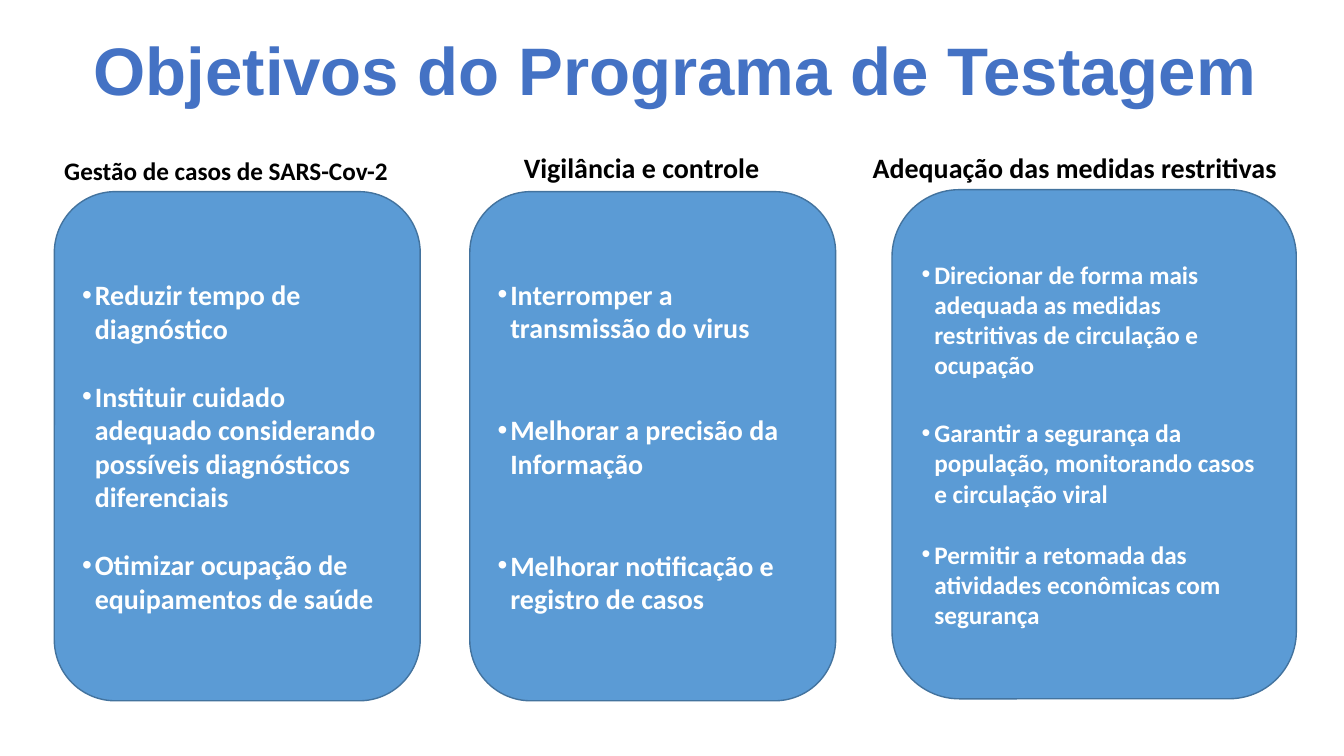
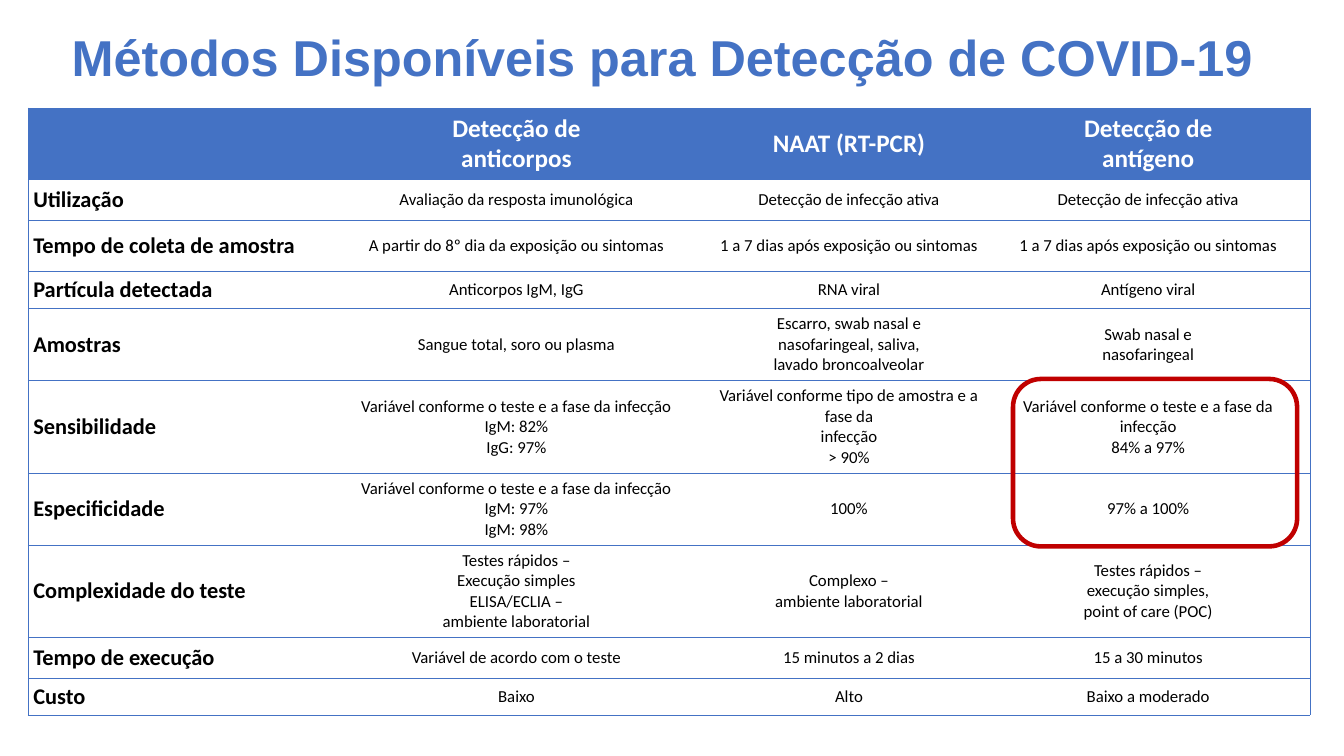
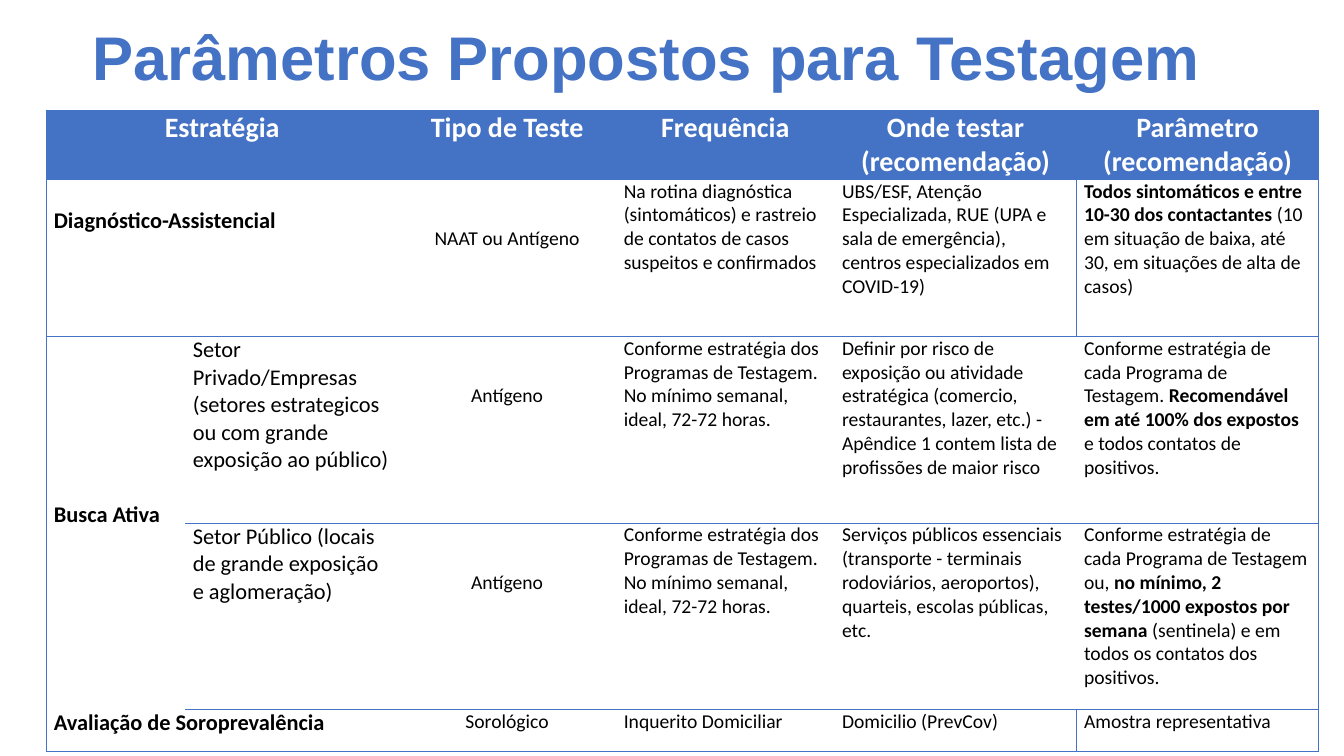
from lxml import etree
from pptx import Presentation
from pptx import util as u
from pptx.dml.color import RGBColor
from pptx.enum import shapes, text
from pptx.oxml.ns import qn

Cm, Pt = u.Cm, u.Pt
HUE = {"blue": "4472C4", "card": "5B9BD5", "edge": "43739E",
       "red": "C00000", "black": "000000", "white": "FFFFFF"}
LEFT, MID = text.PP_ALIGN.LEFT, text.PP_ALIGN.CENTER
TOP, HALF = text.MSO_ANCHOR.TOP, text.MSO_ANCHOR.MIDDLE
PLAIN = "{2D5ABB26-0587-4C30-8999-92F81FD0307C}"


def write(frame, words, size=18, hue="black", bold=False, face="Calibri",
          align=LEFT, anchor=TOP, lead=None, gaps=(), dots=False):
    """Fill a frame: a new line starts a paragraph, *stars* switch to bold."""
    frame.word_wrap = True
    frame.vertical_anchor = anchor
    for i, line in enumerate(words.split("\n")):
        para = frame.add_paragraph() if i else frame.paragraphs[0]
        para.alignment = align
        para.line_spacing = lead
        if i and gaps:
            para.space_before = Pt(gaps[i - 1])
        if dots:
            prop = para._p.get_or_add_pPr()
            prop.set("marL", str(Cm(0.32)))
            prop.set("indent", str(-Cm(0.32)))
            etree.SubElement(prop, qn("a:buFont"), typeface="Arial")
            etree.SubElement(prop, qn("a:buChar"), char="•")
        for j, part in enumerate(line.split("*")):
            if part:
                run = para.add_run()
                run.text = part
                font = run.font
                font.name, font.size = face, Pt(size)
                font.bold = bold or j % 2 == 1
                font.color.rgb = RGBColor.from_string(HUE[hue])


def grid(slide, left, top, cols, rows, cells, sizes, mids, head, pad,
         anchor=TOP, spans=(), bare=(), ruled=()):
    """Add a ruled table; bare cells lack a bottom line, ruled ones gain a left line."""
    table = slide.shapes.add_table(len(rows), len(cols), Cm(left), Cm(top),
                                   Cm(sum(cols)), Cm(sum(rows))).table
    table._tbl.tblPr.find(qn("a:tableStyleId")).text = PLAIN
    table.first_row = table.horz_banding = False
    for col, wide in zip(table.columns, cols):
        col.width = Cm(wide)
    for row, high in zip(table.rows, rows):
        row.height = Cm(high)
    for start, end in spans:
        table.cell(*start).merge(table.cell(*end))
    for r, line in enumerate(cells):
        for c, words in enumerate(line):
            cell = table.cell(r, c)
            cell.margin_left = cell.margin_right = Cm(pad[0])
            cell.margin_top = cell.margin_bottom = Cm(pad[1])
            cell.vertical_anchor = anchor
            cell.fill.solid()
            cell.fill.fore_color.rgb = RGBColor.from_string(HUE["white" if r else "blue"])
            if words:
                write(cell.text_frame, words, anchor=anchor,
                      size=sizes[c] if r else head,
                      hue="black" if r else "white", bold=not r or c == 0,
                      align=MID if not r or c in mids else LEFT)
            sides = {"lnL": c == 0 or (r, c) in ruled, "lnR": c == len(cols) - 1,
                     "lnT": r == 0, "lnB": (r, c) not in bare}
            prop = cell._tc.get_or_add_tcPr()
            for spot, side in enumerate(s for s in sides if sides[s]):
                rule = etree.Element(qn("a:" + side), w=str(Pt(0.5)))
                fill = etree.SubElement(rule, qn("a:solidFill"))
                etree.SubElement(fill, qn("a:srgbClr"), val=HUE["blue"])
                prop.insert(spot, rule)
    return table


deck = Presentation()
deck.slide_width, deck.slide_height = Cm(33.87), Cm(19.05)

# Slides and titles: text, size, left, top, width, height
titles = [
    ("Objetivos do Programa de Testagem", 48, 0.97, 0.66, 32.1, 2.41),
    ("Métodos Disponíveis para Detecção de COVID-19", 36, 0.71, 0.74, 31.98, 1.55),
    ("Parâmetros Propostos para Testagem", 44, 0.46, 0.43, 31.67, 2.21),
]
pages = []
for words, size, *box in titles:
    page = deck.slides.add_slide(deck.slide_layouts[6])
    frame = page.shapes.add_textbox(*map(Cm, box)).text_frame
    write(frame, words, size=size, hue="blue", bold=True, face="Arial",
          align=MID, anchor=HALF, lead=0.9)
    pages.append(page)
goals, tests, plan = pages

# Goals: heading, its size and box, then card box, text size, gaps and points
cards = [
    ("Gestão de casos de SARS-Cov-2", 18, (1.37, 3.78, 8.74, 1.02),
     (1.37, 4.83, 9.22, 12.83), 20, (24.4, 24.4),
     "Reduzir tempo de diagnóstico\n"
     "Instituir cuidado adequado considerando possíveis diagnósticos diferenciais\n"
     "Otimizar ocupação de equipamentos de saúde"),
    ("Vigilância e controle", 20, (12.95, 3.66, 6.5, 1.12),
     (11.84, 4.83, 9.22, 12.83), 20, (48.8, 48.8),
     "Interromper a transmissão do virus\n"
     "Melhorar a precisão da Informação\n"
     "Melhorar notificação e registro de casos"),
    ("Adequação das medidas restritivas", 20, (21.74, 3.66, 11.15, 1.12),
     (22.48, 4.78, 10.19, 12.83), 18, (26.8, 22),
     "Direcionar de forma mais adequada as medidas restritivas de circulação e ocupação\n"
     "Garantir a segurança da população, monitorando casos e circulação viral\n"
     "Permitir a retomada das atividades econômicas com segurança"),
]
for name, big, spot, box, size, gaps, points in cards:
    card = goals.shapes.add_shape(shapes.MSO_SHAPE.ROUNDED_RECTANGLE, *map(Cm, box))
    card.shadow.inherit = False
    card.fill.solid()
    card.fill.fore_color.rgb = RGBColor.from_string(HUE["card"])
    card.line.color.rgb = RGBColor.from_string(HUE["edge"])
    card.line.width = Pt(1)
    write(card.text_frame, points, size=size, hue="white", bold=True,
          anchor=HALF, gaps=gaps, dots=True)
    frame = goals.shapes.add_textbox(*map(Cm, spot)).text_frame
    write(frame, name, size=big, bold=True)

# Test methods
phase = "Variável conforme o teste e a fase da infecção\n"
days = "1 a 7 dias após exposição ou sintomas"
active = "Detecção de infecção ativa"
cells = [
    ("", "Detecção de\nanticorpos", "NAAT (RT-PCR)", "Detecção de\nantígeno"),
    ("Utilização", "Avaliação da resposta imunológica", active, active),
    ("Tempo de coleta de amostra", "A partir do 8º dia da exposição ou sintomas", days, days),
    ("Partícula detectada", "Anticorpos IgM, IgG", "RNA viral", "Antígeno viral"),
    ("Amostras", "Sangue total, soro ou plasma",
     "Escarro, swab nasal e\nnasofaringeal, saliva,\nlavado broncoalveolar",
     "Swab nasal e\nnasofaringeal"),
    ("Sensibilidade", phase + "IgM: 82%\nIgG: 97%",
     "Variável conforme tipo de amostra e a fase da\ninfecção\n> 90%",
     "Variável conforme o teste e a fase da\ninfecção\n84% a 97%"),
    ("Especificidade", phase + "IgM: 97%\nIgM: 98%", "100%", "97% a 100%"),
    ("Complexidade do teste",
     "Testes rápidos –\nExecução simples\nELISA/ECLIA –\nambiente laboratorial",
     "Complexo –\nambiente laboratorial",
     "Testes rápidos –\nexecução simples,\npoint of care (POC)"),
    ("Tempo de execução", "Variável de acordo com o teste",
     "15 minutos a 2 dias", "15 a 30 minutos"),
    ("Custo", "Baixo", "Alto", "Baixo a moderado"),
]
grid(tests, 0.71, 2.72, (7.39, 9.83, 6.93, 8.15),
     (1.81, 1.02, 1.29, 0.94, 1.81, 2.33, 1.81, 2.33, 1.02, 0.94),
     cells, sizes=(16, 12, 12, 12), mids=(1, 2, 3), head=18,
     pad=(0.13, 0.13), anchor=HALF)
ring = tests.shapes.add_shape(shapes.MSO_SHAPE.ROUNDED_RECTANGLE,
                              Cm(25.53), Cm(9.55), Cm(7.16), Cm(4.22))
ring.shadow.inherit = False
ring.fill.background()
ring.line.color.rgb = RGBColor.from_string(HUE["red"])
ring.line.width = Pt(3.25)

# Testing parameters
weekly = ("Conforme estratégia dos Programas de Testagem. "
          "No mínimo semanal, ideal, 72-72 horas.")
cells = [
    ("Estratégia", "", "Tipo de Teste", "Frequência",
     "Onde testar (recomendação)", "Parâmetro (recomendação)"),
    ("Diagnóstico-Assistencial", "", "NAAT ou Antígeno",
     "Na rotina diagnóstica (sintomáticos) e rastreio de contatos de casos "
     "suspeitos e confirmados",
     "UBS/ESF, Atenção Especializada, RUE (UPA e sala de emergência), "
     "centros especializados em COVID-19)",
     "*Todos sintomáticos e entre 10-30 dos contactantes *"
     "(10 em situação de baixa, até 30, em situações de alta de casos)"),
    ("Busca Ativa",
     "Setor Privado/Empresas (setores estrategicos ou com grande exposição ao público)",
     "Antígeno", weekly,
     "Definir por risco de exposição ou atividade estratégica (comercio, "
     "restaurantes, lazer, etc.) - Apêndice 1 contem lista de profissões de maior risco",
     "Conforme estratégia de cada Programa de Testagem. "
     "*Recomendável em até 100% dos expostos *e todos contatos de positivos."),
    ("", "Setor Público (locais de grande exposição e aglomeração)",
     "Antígeno", weekly,
     "Serviços públicos essenciais (transporte - terminais rodoviários, "
     "aeroportos), quarteis, escolas públicas, etc.",
     "Conforme estratégia de cada Programa de Testagem ou, "
     "*no mínimo, 2 testes/1000 expostos por semana *"
     "(sentinela) e em todos os contatos dos positivos."),
    ("Avaliação de Soroprevalência", "", "Sorológico", "Inquerito Domiciliar",
     "Domicilio (PrevCov)", "Amostra representativa"),
]
table = grid(plan, 1.17, 2.79, (3.5, 5.36, 5.5, 5.5, 6.1, 6.1),
             (1.73, 3.96, 4.7, 4.7, 1.04), cells,
             sizes=(16, 16, 14, 14, 14, 14), mids=(2,), head=20, pad=(0.19, 0),
             spans=[((r, 0), (r, 1)) for r in (0, 1, 4)] + [((2, 0), (3, 0))],
             bare=((2, 0), (3, 0)), ruled=((1, 5), (4, 5)))
table.cell(1, 0).margin_top = Cm(0.69)
for r in (1, 2, 3):
    table.cell(r, 2).margin_top = Cm(1.2)
hunt = table.cell(2, 0)
hunt.vertical_anchor = HALF
hunt.margin_bottom = Cm(0.41)

deck.save("out.pptx")
